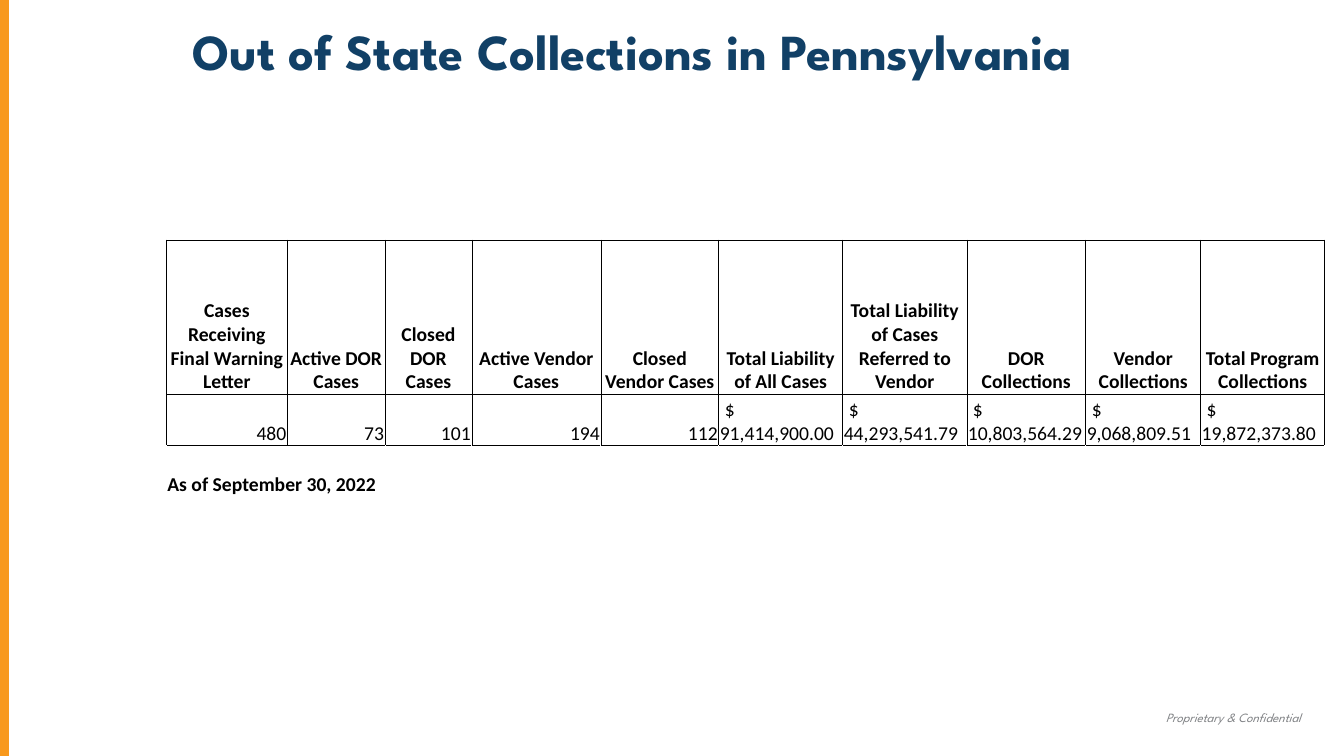
import pptx
import pptx.util
import pptx.dml.color
import pptx.enum.shapes
import pptx.enum.text
import pptx.oxml
import pptx.oxml.ns
import lxml.etree

Inches = pptx.util.Inches
Pt = pptx.util.Pt
RGBColor = pptx.dml.color.RGBColor
Align = pptx.enum.text.PP_ALIGN
Anchor = pptx.enum.text.MSO_ANCHOR

ORANGE = RGBColor(0xF8, 0x99, 0x1D)
NAVY = RGBColor(0x11, 0x40, 0x66)
GRAY = RGBColor(0x80, 0x82, 0x85)
BLACK = RGBColor(0x00, 0x00, 0x00)

COLUMNS = [
    (1.2, "Cases Receiving Final Warning Letter", "480"),
    (0.97, "Active DOR Cases", "73"),
    (0.86, "Closed DOR Cases", "101"),
    (1.28, "Active Vendor Cases", "194"),
    (1.17, "Closed Vendor Cases", "112"),
    (1.23, "Total Liability of All Cases", "$ 91,414,900.00"),
    (1.23, "Total Liability of Cases Referred to Vendor", "$ 44,293,541.79"),
    (1.18, "DOR Collections", "$ 10,803,564.29"),
    (1.14, "Vendor Collections", "$ 9,068,809.51"),
    (1.23, "Total Program Collections", "$ 19,872,373.80"),
]
ROW_HEIGHTS = [1.53, 0.51, 0.51]


def write(text_frame, text, font_name, size, color, bold=False, alignment=Align.LEFT):
    text_frame.text = text
    paragraph = text_frame.paragraphs[0]
    paragraph.alignment = alignment
    font = paragraph.runs[0].font
    font.name = font_name
    font.size = Pt(size)
    font.color.rgb = color
    font.bold = bold
    return paragraph


def format_cell(cell, sides):
    """Draw thin black borders on the given sides, with tight margins and no fill."""
    properties = cell._tc.get_or_add_tcPr()
    for side in sides:
        properties.append(pptx.oxml.parse_xml(
            f'<a:ln{side} {pptx.oxml.ns.nsdecls("a")} w="{Pt(0.5)}"><a:solidFill>'
            f'<a:srgbClr val="{BLACK}"/></a:solidFill></a:ln{side}>'))
    cell.fill.background()
    cell.vertical_anchor = Anchor.BOTTOM
    cell.margin_left = cell.margin_right = cell.margin_top = Inches(0.01)
    cell.margin_bottom = 0


presentation = pptx.Presentation()
presentation.slide_width = Inches(13.33)
presentation.slide_height = Inches(7.5)
slide = presentation.slides.add_slide(presentation.slide_layouts[5])

# Footer and side bar
footer = slide.shapes.add_textbox(Inches(10.97), Inches(6.91), Inches(2.03), Inches(0.33))
footer.text_frame.word_wrap = True
footer.text_frame.vertical_anchor = Anchor.BOTTOM
footer_paragraph = write(footer.text_frame, "Proprietary & Confidential",
                         "League Spartan", 9, GRAY, alignment=Align.RIGHT)
footer_paragraph.runs[0].font.italic = True

side_bar = slide.shapes.add_connector(
    pptx.enum.shapes.MSO_CONNECTOR.STRAIGHT, Inches(0.03), 0, Inches(0.03), Inches(7.5))
side_bar.line.color.rgb = ORANGE
side_bar.line.width = Pt(8)
lxml.etree.SubElement(side_bar._element.spPr, pptx.oxml.ns.qn("a:effectLst"))

# Title
title = slide.shapes.title
title.left, title.top = Inches(1.81), Inches(0.15)
title.width, title.height = Inches(11.19), Inches(1)
title.text_frame.auto_size = pptx.enum.text.MSO_AUTO_SIZE.NONE
title.text_frame.vertical_anchor = Anchor.TOP
write(title.text_frame, "Out of State Collections in Pennsylvania",
      "League Spartan", 36, NAVY, bold=True)

# Collections table
table = slide.shapes.add_table(len(ROW_HEIGHTS), len(COLUMNS), Inches(1.65), Inches(2.38),
                               Inches(11.5), Inches(sum(ROW_HEIGHTS))).table
table.first_row = False
table.horz_banding = False
for row, height in zip(table.rows, ROW_HEIGHTS):
    row.height = Inches(height)

for index, (width, heading, value) in enumerate(COLUMNS):
    table.columns[index].width = Inches(width)
    heading_cell, value_cell, note_cell = (table.cell(row, index) for row in range(3))
    format_cell(heading_cell, "LRTB")
    format_cell(value_cell, "LRTB")
    format_cell(note_cell, "T")
    write(heading_cell.text_frame, heading, "Calibri", 14, BLACK, True, Align.CENTER)
    is_amount = value.startswith("$")
    value_paragraph = write(value_cell.text_frame, value, "Calibri", 14, BLACK,
                            alignment=Align.LEFT if is_amount else Align.RIGHT)
    if is_amount:
        value_paragraph._p.get_or_add_pPr().set("indent", str(Inches(0.05)))

date_cell = table.cell(2, 0)
date_cell.merge(table.cell(2, 1))
write(date_cell.text_frame, "As of September 30, 2022", "Calibri", 14, BLACK, bold=True)

presentation.save("out.pptx")
